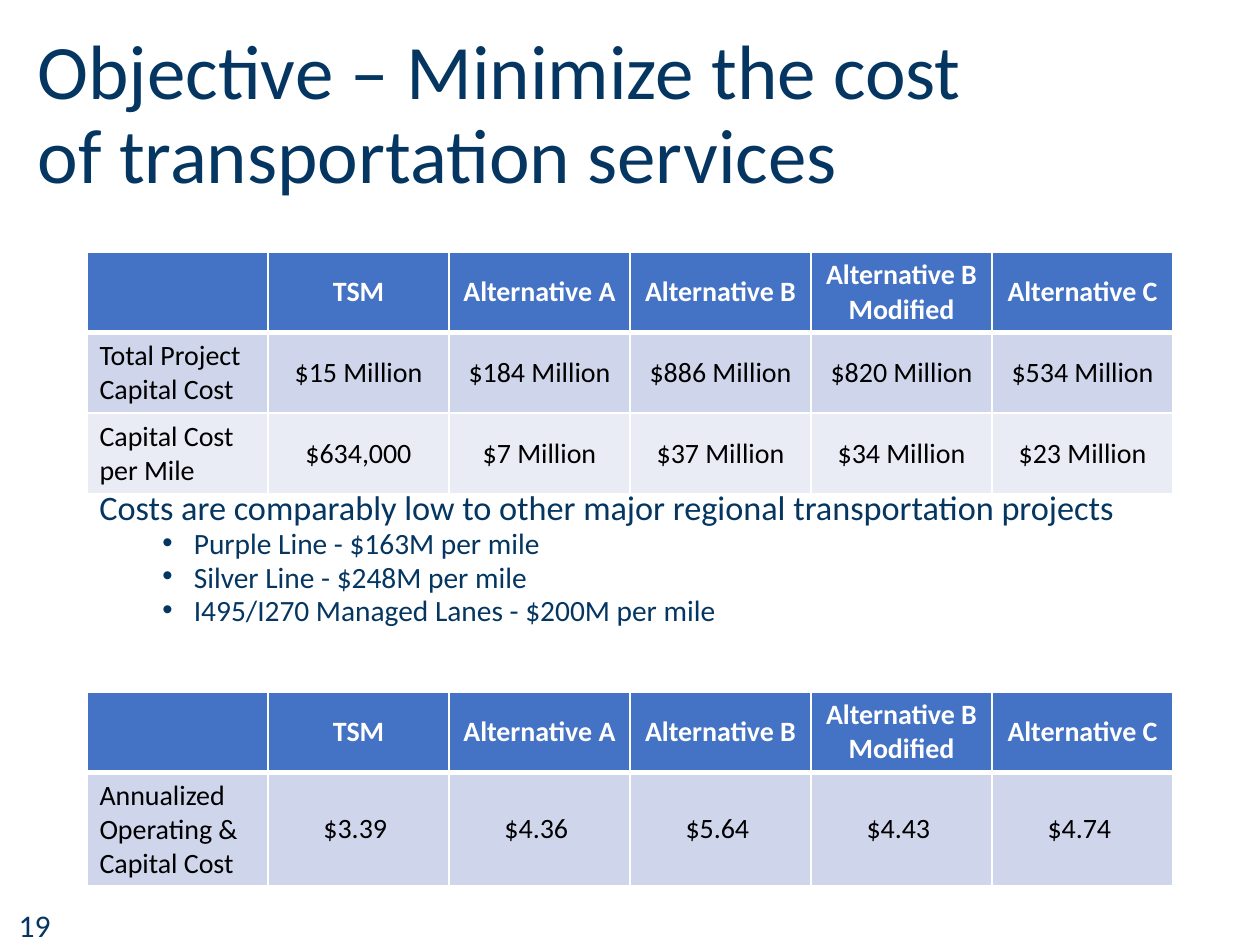
from lxml.etree import SubElement
from pptx import Presentation
from pptx.dml.color import RGBColor
from pptx.enum.text import MSO_ANCHOR as Anchor, PP_ALIGN as Align
from pptx.oxml.ns import qn
from pptx.util import Inches, Pt

FONT = "Calibri"
COLORS = {
    "navy": "043661",
    "header": "4472C4",
    "band_dark": "CFD5EA",
    "band_light": "E9EBF5",
    "white": "FFFFFF",
    "black": "000000",
}
TABLE_LEFT, TABLE_WIDTH = 0.69, 8.62
HEADERS = ["", "TSM", "Alternative A", "Alternative B",
           "Alternative B Modified", "Alternative C"]
CAPITAL_COSTS = [
    ["Total Project Capital Cost", "$15 Million", "$184 Million",
     "$886 Million", "$820 Million", "$534 Million"],
    ["Capital Cost per Mile", "$634,000", "$7 Million",
     "$37 Million", "$34 Million", "$23 Million"],
]
ANNUALIZED_COSTS = [
    ["Annualized Operating & Capital Cost", "$3.39 ", "$4.36 ",
     "$5.64 ", "$4.43 ", "$4.74 "],
]
PROJECTS = [
    "Purple Line - $163M per mile",
    "Silver Line - $248M per mile",
    "I495/I270 Managed Lanes - $200M per mile",
]


def color(name):
    return RGBColor.from_string(COLORS[name])


def write(paragraph, text, size=16, color_name="navy", bold=False,
          align=Align.LEFT, line_spacing=1.0, space_before=0, bullet=False):
    paragraph.alignment = align
    paragraph.line_spacing = line_spacing
    paragraph.space_before = Pt(space_before)
    if bullet:
        properties = paragraph._p.get_or_add_pPr()
        properties.set("marL", str(Inches(0.75)))
        properties.set("indent", str(Inches(-0.25)))
        SubElement(properties, qn("a:buFont"), typeface="Arial")
        SubElement(properties, qn("a:buChar"), char="•")
    run = paragraph.add_run()
    run.text = text
    run.font.name = FONT
    run.font.size = Pt(size)
    run.font.bold = bold
    run.font.color.rgb = color(color_name)


def add_text_frame(slide, left, top, width, height, anchor=Anchor.TOP):
    box = slide.shapes.add_textbox(
        Inches(left), Inches(top), Inches(width), Inches(height))
    frame = box.text_frame
    frame.word_wrap = True
    frame.vertical_anchor = anchor
    return frame


def set_borders(cell, top=1, bottom=1):
    properties = cell._tc.get_or_add_tcPr()
    widths = {"a:lnL": 1, "a:lnR": 1, "a:lnT": top, "a:lnB": bottom}
    for tag, width in widths.items():
        line = SubElement(properties, qn(tag), w=str(Pt(width)))
        fill = SubElement(line, qn("a:solidFill"))
        SubElement(fill, qn("a:srgbClr"), val=COLORS["white"])


def add_cost_table(slide, top, rows, row_heights, value_margin=None):
    grid = [HEADERS] + rows
    table = slide.shapes.add_table(
        len(grid), len(HEADERS), Inches(TABLE_LEFT), Inches(top),
        Inches(TABLE_WIDTH), Inches(sum(row_heights))).table
    for column in table.columns:
        column.width = Inches(TABLE_WIDTH / len(HEADERS))
    fills = ["header", "band_dark", "band_light"]
    for r, texts in enumerate(grid):
        table.rows[r].height = Inches(row_heights[r])
        is_header = r == 0
        for c, text in enumerate(texts):
            cell = table.cell(r, c)
            # Thick rule between the header and the first row
            set_borders(cell, top=3 if r == 1 else 1,
                        bottom=3 if is_header else 1)
            cell.fill.solid()
            cell.fill.fore_color.rgb = color(fills[r])
            if c:
                cell.vertical_anchor = Anchor.MIDDLE
                if value_margin is not None and not is_header:
                    cell.margin_left = cell.margin_right = value_margin
                    cell.margin_top = cell.margin_bottom = value_margin
            if text:
                write(cell.text_frame.paragraphs[0], text, bold=is_header,
                      color_name="white" if is_header else "black",
                      align=Align.CENTER if c else Align.LEFT)


def main():
    presentation = Presentation()
    presentation.slide_width = Inches(10)
    presentation.slide_height = Inches(7.5)
    slide = presentation.slides.add_slide(presentation.slide_layouts[6])

    # Slide number
    number = add_text_frame(slide, 0.05, 7.14, 2.25, 0.4)
    write(number.paragraphs[0], "19", size=18)

    # Title
    title = add_text_frame(slide, 0.2, 0.2, 8, 1.45, Anchor.MIDDLE)
    write(title.paragraphs[0],
          "Objective – Minimize the cost of transportation services",
          size=44, line_spacing=0.9)

    # Comparison with other projects
    body = add_text_frame(slide, TABLE_LEFT, 3.9, TABLE_WIDTH, 1.27)
    write(body.paragraphs[0],
          "Costs are comparably low to other major regional "
          "transportation projects", size=19.6, line_spacing=0.7)
    for project in PROJECTS:
        write(body.add_paragraph(), project, size=16.8, line_spacing=0.7,
              space_before=5, bullet=True)

    # Cost tables
    add_cost_table(slide, 2, CAPITAL_COSTS, [0.64, 0.64, 0.64])
    add_cost_table(slide, 5.49, ANNUALIZED_COSTS, [0.64, 0.9], value_margin=0)

    presentation.save("out.pptx")


if __name__ == "__main__":
    main()
